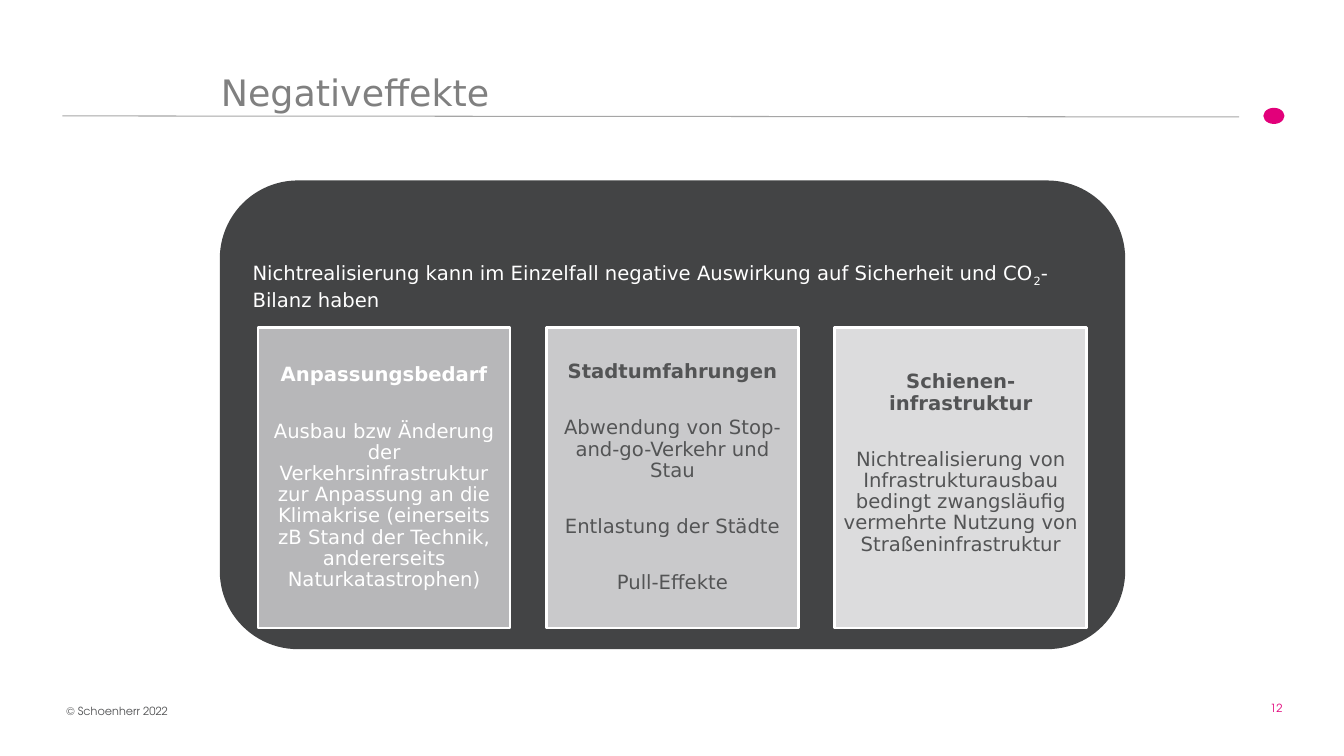
from dataclasses import dataclass

import pptx
import pptx.dml.color
import pptx.enum.shapes
import pptx.enum.text
import pptx.oxml
import pptx.oxml.ns
import pptx.util

Inches = pptx.util.Inches
Pt = pptx.util.Pt
RGBColor = pptx.dml.color.RGBColor
MSO_SHAPE = pptx.enum.shapes.MSO_SHAPE
ANCHOR = pptx.enum.text.MSO_ANCHOR
ALIGN = pptx.enum.text.PP_ALIGN

WHITE = RGBColor(0xFF, 0xFF, 0xFF)
PINK = RGBColor(0xE2, 0x00, 0x7A)
RULE_GRAY = RGBColor(0xA6, 0xA6, 0xA6)
TITLE_GRAY = RGBColor(0x80, 0x80, 0x80)
TEXT_GRAY = RGBColor(0x53, 0x54, 0x55)
PANEL_GRAY = RGBColor(0x43, 0x44, 0x45)
CARD_DARK = RGBColor(0xB7, 0xB7, 0xB9)
CARD_MID = RGBColor(0xC9, 0xC9, 0xCB)
CARD_LIGHT = RGBColor(0xDC, 0xDC, 0xDD)

BODY_FONT = "DejaVu Sans"
FOOTER_FONT = "TeX Gyre Adventor"
CARD_LEFT, CARD_TOP, CARD_W, CARD_H, CARD_STEP = 2.56, 3.25, 2.5, 2.98, 2.86


@dataclass
class Card:
    heading: str
    points: list[str]
    fill: RGBColor
    color: RGBColor
    bottom: float = 0.06


CARDS = [
    Card("Anpassungsbedarf",
         ["Ausbau bzw Änderung der Verkehrsinfrastruktur zur Anpassung an die Klimakrise "
          "(einerseits zB Stand der Technik, andererseits Naturkatastrophen)"],
         CARD_DARK, WHITE),
    Card("Stadtumfahrungen",
         ["Abwendung von Stop-and-go-Verkehr und Stau", "Entlastung der Städte", "Pull-Effekte"],
         CARD_MID, TEXT_GRAY),
    Card("Schienen-infrastruktur",
         ["Nichtrealisierung von Infrastrukturausbau bedingt zwangsläufig vermehrte Nutzung "
          "von Straßeninfrastruktur"],
         CARD_LIGHT, TEXT_GRAY, bottom=0.34),
]


def add_run(p, text: str, size: float, color: RGBColor, font: str = BODY_FONT, bold: bool = False):
    r = p.add_run()
    r.text = text
    r.font.name = font
    r.font.size = Pt(size)
    r.font.bold = bold
    r.font.color.rgb = color
    return r


def add_box(s, kind, left: float, top: float, width: float, height: float, fill: RGBColor):
    sp = s.shapes.add_shape(kind, Inches(left), Inches(top), Inches(width), Inches(height))
    sp.shadow.inherit = False
    sp.fill.solid()
    sp.fill.fore_color.rgb = fill
    sp.line.fill.background()
    return sp


def add_footer(s, text: str, left: float, top: float, width: float, color: RGBColor, wrap: bool) -> None:
    tf = s.shapes.add_textbox(Inches(left), Inches(top), Inches(width), Inches(0.24)).text_frame
    tf.word_wrap = wrap
    add_run(tf.paragraphs[0], text, 8, color, FOOTER_FONT)


def add_card(s, card: Card, left: float) -> None:
    sp = add_box(s, MSO_SHAPE.RECTANGLE, left, CARD_TOP, CARD_W, CARD_H, card.fill)
    sp.line.color.rgb = WHITE
    sp.line.width = Pt(2)
    tf = sp.text_frame
    tf.word_wrap = True
    tf.vertical_anchor = ANCHOR.MIDDLE
    tf.margin_left = tf.margin_right = tf.margin_top = Inches(0.06)
    tf.margin_bottom = Inches(card.bottom)
    for i, text in enumerate([card.heading, *card.points]):
        p = tf.add_paragraph() if i else tf.paragraphs[0]
        p.alignment = ALIGN.CENTER
        p.line_spacing = 0.9
        if i:
            p.space_before = Pt(25)
        add_run(p, text, 14, card.color, bold=i == 0)


def main() -> None:
    prs = pptx.Presentation()
    prs.slide_width, prs.slide_height = Inches(13.33), Inches(7.5)
    s = prs.slides.add_slide(prs.slide_layouts.get_by_name("Title Only"))

    # Header rule and dot
    rule = s.shapes.add_connector(pptx.enum.shapes.MSO_CONNECTOR.STRAIGHT,
                                  Inches(0.62), Inches(1.15), Inches(12.29), Inches(1.16))
    rule.line.color.rgb = RULE_GRAY
    rule.line.width = Pt(0.75)
    rule._element.spPr.append(pptx.oxml.parse_xml(
        f"<a:effectLst {pptx.oxml.ns.nsdecls('a')}/>"))
    add_box(s, MSO_SHAPE.OVAL, 12.53, 1.07, 0.21, 0.16, PINK)

    # Title
    title = s.shapes.title
    title.left, title.top = Inches(2.09), Inches(0.63)
    title.width, title.height = Inches(8.86), Inches(0.55)
    tf = title.text_frame
    tf.auto_size = pptx.enum.text.MSO_AUTO_SIZE.NONE
    tf.vertical_anchor = ANCHOR.BOTTOM
    p = tf.paragraphs[0]
    p.alignment = ALIGN.LEFT
    add_run(p, "Negativeffekte", 26, TITLE_GRAY)

    # Panel with its statement
    panel = add_box(s, MSO_SHAPE.ROUNDED_RECTANGLE, 2.18, 1.79, 8.98, 4.65, PANEL_GRAY)
    tf = panel.text_frame
    tf.word_wrap = True
    tf.vertical_anchor = ANCHOR.TOP
    tf.margin_top = Inches(0.57)
    p = tf.paragraphs[0]
    p.alignment = ALIGN.LEFT
    add_run(p, "Nichtrealisierung kann im Einzelfall negative Auswirkung auf Sicherheit und CO", 14, WHITE)
    r = add_run(p, "2", 14, WHITE)
    r._r.get_or_add_rPr().set("baseline", "-25000")
    add_run(p, "-Bilanz haben", 14, WHITE)

    # Cards
    for i, card in enumerate(CARDS):
        add_card(s, card, CARD_LEFT + i * CARD_STEP)

    # Footer
    add_footer(s, "© Schoenherr 2022", 0.56, 6.94, 2.94, TEXT_GRAY, wrap=True)
    add_footer(s, "12", 12.5, 6.91, 0.41, PINK, wrap=False)

    prs.save("out.pptx")


if __name__ == "__main__":
    main()
